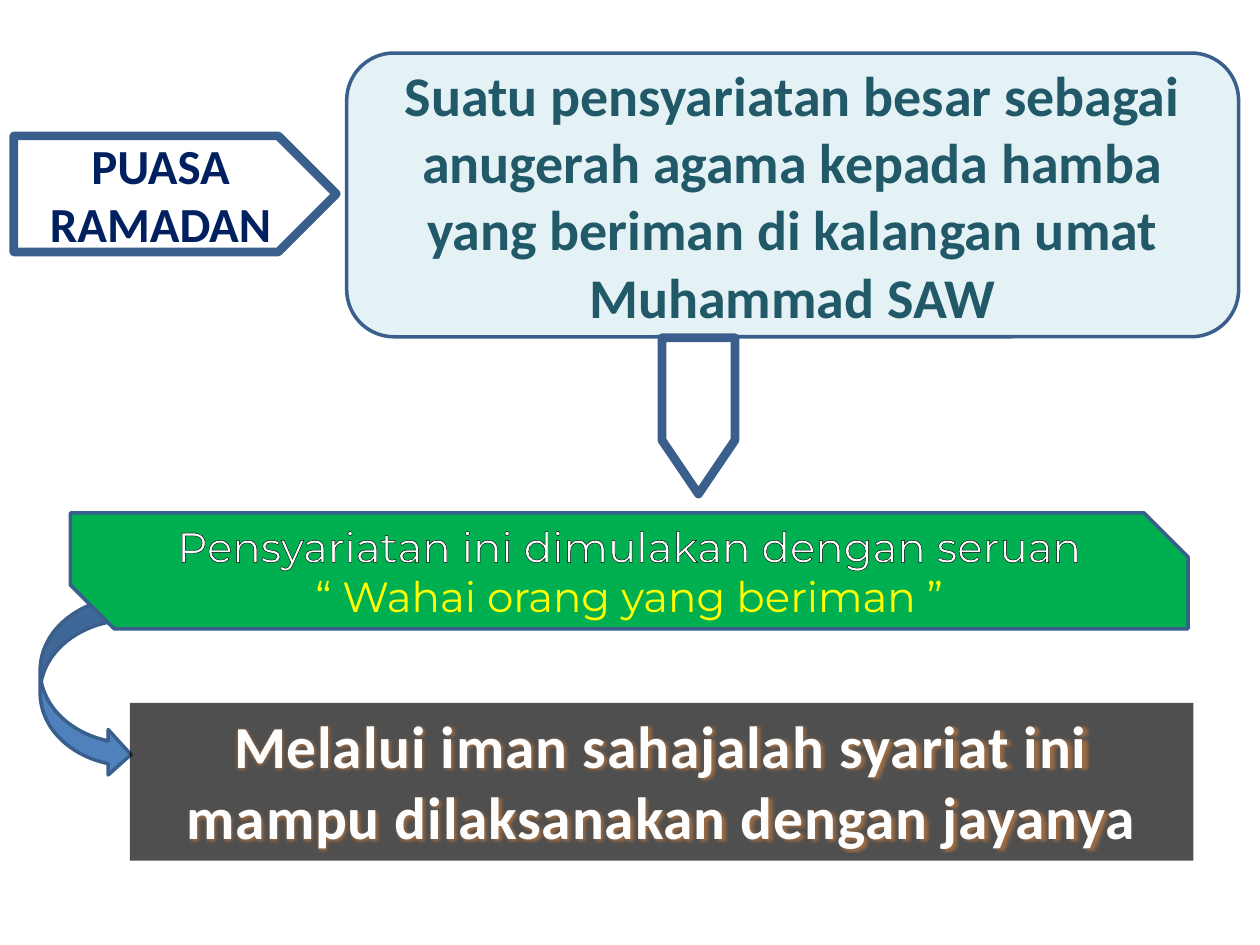
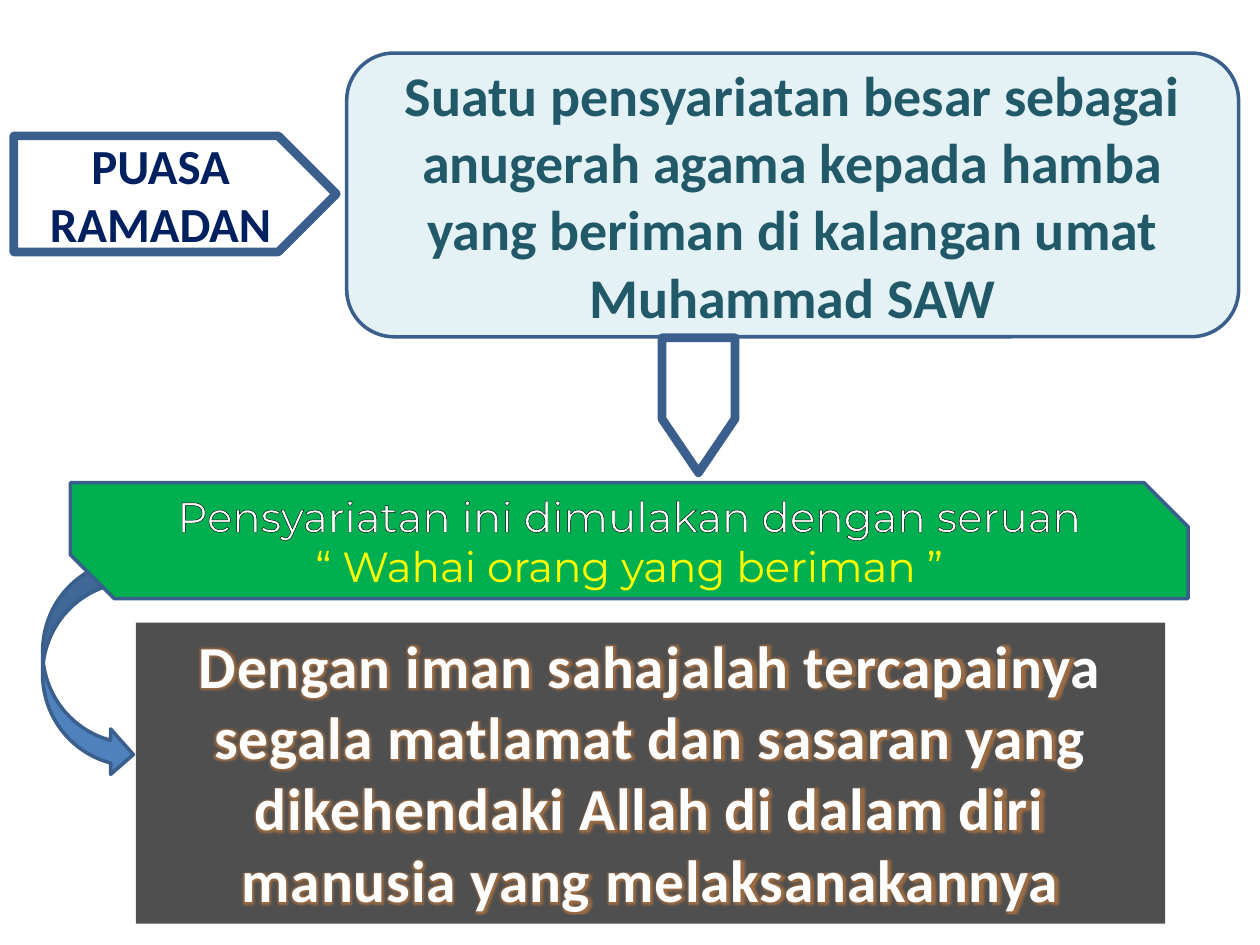
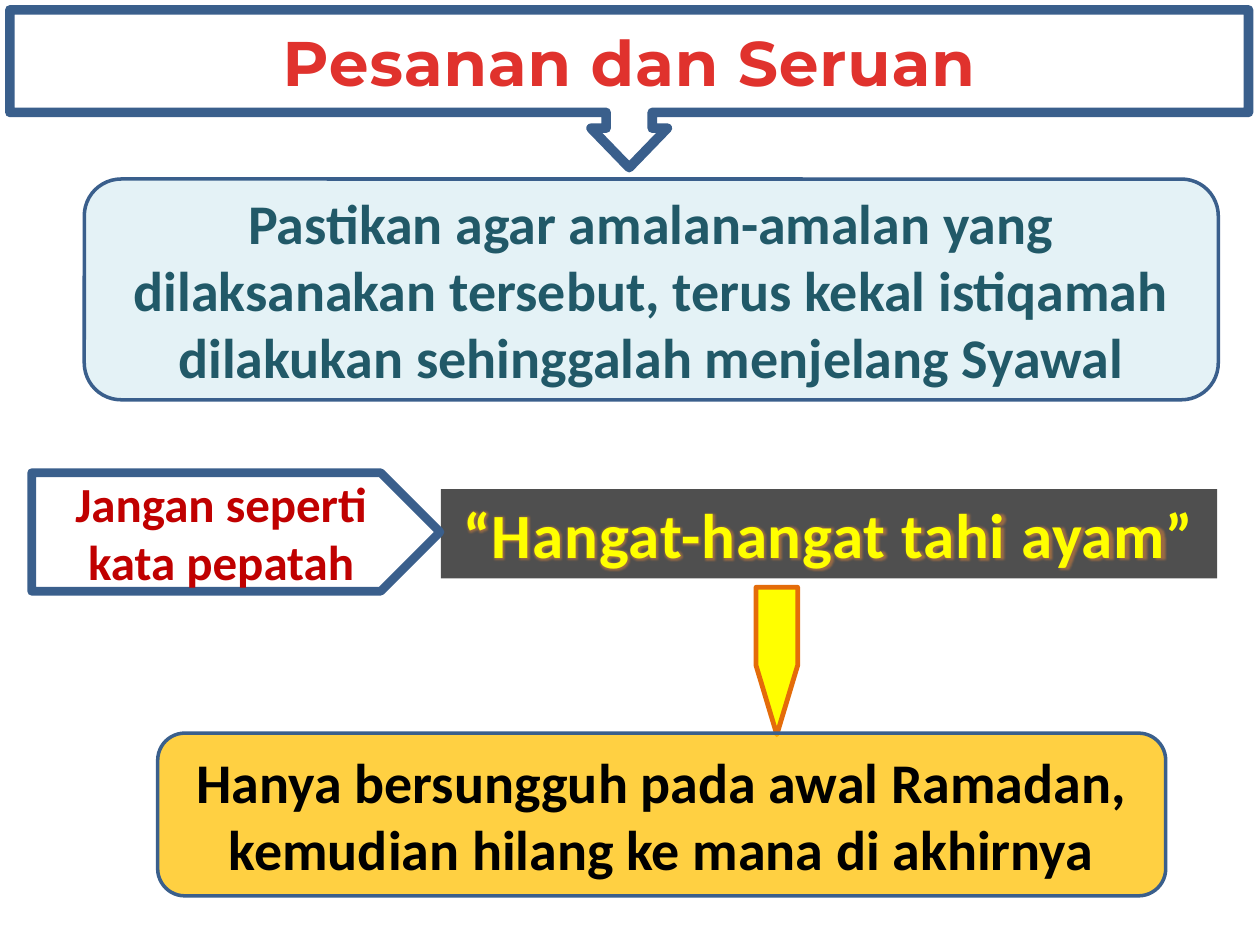
from dataclasses import dataclass
from typing import NamedTuple, Optional

import pptx
import pptx.dml.color
import pptx.enum.dml
import pptx.enum.shapes
import pptx.enum.text
import pptx.oxml
import pptx.oxml.ns
import pptx.util
from pptx.dml.color import RGBColor
from pptx.enum.shapes import MSO_SHAPE
from pptx.util import Cm

WHITE = RGBColor(0xFF, 0xFF, 0xFF)
OFF_WHITE = RGBColor(0xFF, 0xFE, 0xFE)
BLACK = RGBColor(0x00, 0x00, 0x00)
NAVY = RGBColor(0x00, 0x20, 0x60)
TEAL = RGBColor(0x21, 0x59, 0x68)
PALE_BLUE = RGBColor(0xDB, 0xEE, 0xF4)
BLUE = RGBColor(0x4F, 0x81, 0xBD)
EDGE_BLUE = RGBColor(0x3A, 0x5F, 0x8C)
GREEN = RGBColor(0x00, 0xB0, 0x50)
YELLOW = RGBColor(0xFF, 0xFF, 0x00)
GOLD = RGBColor(0xFF, 0xC0, 0x00)
ORANGE = RGBColor(0xE4, 0x6C, 0x0A)
GLOW_ORANGE = RGBColor(0xE7, 0x87, 0x38)
DARK_RED = RGBColor(0xC0, 0x00, 0x00)
TITLE_RED = RGBColor(0xE0, 0x32, 0x2D)
TITLE_SHADE = RGBColor(0xA2, 0x20, 0x1C)

CALLOUT_ADJ = (0.292, 0.242, 0.25, 0.65)


class Box(NamedTuple):
    """Left, top, width and height in centimetres."""
    left: float
    top: float
    width: float
    height: float

    def lengths(self) -> list:
        return [Cm(v) for v in self]


@dataclass(frozen=True)
class Look:
    fill: RGBColor
    line: Optional[RGBColor] = EDGE_BLUE
    weight: float = 2
    opacity: int = 100


@dataclass(frozen=True)
class TextStyle:
    size: float
    color: RGBColor
    name: str = "Calibri"
    bold: bool = True
    spacing: float = 0
    outline: Optional[RGBColor] = None
    outline_weight: float = 1
    effect: str = ""


CARD = Look(PALE_BLUE, opacity=74)
GOLD_CARD = Look(GOLD, opacity=74)
LABEL = Look(WHITE, weight=5)
CALLOUT = Look(WHITE, weight=5.5)
BANNER = Look(GREEN)
CURVED = Look(BLUE)
YELLOW_POINTER = Look(YELLOW, ORANGE, 2.75)
STATEMENT = Look(BLACK, None, opacity=69)

TEXT_SHADOW = ('<a:outerShdw blurRad="50800" dist="38100" dir="2700000">'
               '<a:srgbClr val="000000"/></a:outerShdw>')
TEXT_GLOW = ('<a:glow rad="45500"><a:srgbClr val="E78738">'
             '<a:alpha val="50000"/></a:srgbClr></a:glow>')

CARD_TEXT = TextStyle(32, TEAL)
GOLD_TEXT = TextStyle(32, BLACK)
LABEL_TEXT = TextStyle(28, NAVY)
WARNING_TEXT = TextStyle(28, DARK_RED)
BANNER_TEXT = TextStyle(24, WHITE, "Montserrat", False, 0, BLACK, 0.75, TEXT_SHADOW)
CALL_TEXT = TextStyle(24, YELLOW, "Montserrat", False, 0, BLACK, 0.75, TEXT_SHADOW)
STATEMENT_TEXT = TextStyle(34, OFF_WHITE, spacing=0.5, outline=GLOW_ORANGE, effect=TEXT_GLOW)
PROVERB_TEXT = TextStyle(36, YELLOW, spacing=0.5, outline=GLOW_ORANGE, effect=TEXT_GLOW)
TITLE_TEXT = TextStyle(36, TITLE_RED, "Montserrat", spacing=0.5)


def element(tag: str, attributes: str, content: str):
    return pptx.oxml.parse_xml(
        f'<a:{tag} {pptx.oxml.ns.nsdecls("a")} {attributes}>{content}</a:{tag}>')


def format_run(r, style: TextStyle) -> None:
    formats = {"size": pptx.util.Pt(style.size), "bold": style.bold, "name": style.name}
    for key, value in formats.items():
        setattr(r.font, key, value)
    r.font.color.rgb = style.color
    props = r.font._element
    if style.spacing:
        props.set("spc", str(int(style.spacing * 100)))
    if style.outline is not None:
        fill = f'<a:solidFill><a:srgbClr val="{style.outline}"/></a:solidFill>'
        weight = pptx.util.Pt(style.outline_weight)
        props.insert(0, element("ln", f'w="{weight}"', fill))
    if style.effect:
        solid = props.find(pptx.oxml.ns.qn("a:solidFill"))
        solid.addnext(element("effectLst", "", style.effect))


def write(tf, *lines: tuple[str, TextStyle]) -> None:
    """Fill a frame with centred paragraphs, one for each line."""
    tf.word_wrap = True
    for i, (text, style) in enumerate(lines):
        p = tf.add_paragraph() if i else tf.paragraphs[0]
        p.alignment = pptx.enum.text.PP_ALIGN.CENTER
        r = p.add_run()
        r.text = text
        format_run(r, style)


def paint(sp, look: Look) -> None:
    sp.fill.solid()
    sp.fill.fore_color.rgb = look.fill
    if look.opacity < 100:
        color = sp._element.spPr.find(".//" + pptx.oxml.ns.qn("a:srgbClr"))
        color.append(element("alpha", f'val="{look.opacity * 1000}"', ""))
    if look.line is None:
        sp.line.fill.background()
    else:
        sp.line.color.rgb = look.line
        sp.line.width = pptx.util.Pt(look.weight)


def add_figure(s, kind, box: Box, look: Look, *lines: tuple[str, TextStyle], adj=()):
    sp = s.shapes.add_shape(kind, *box.lengths())
    sp.shadow.inherit = False
    for i, value in enumerate(adj):
        sp.adjustments[i] = value
    paint(sp, look)
    if lines:
        sp.text_frame.vertical_anchor = pptx.enum.text.MSO_ANCHOR.MIDDLE
        write(sp.text_frame, *lines)
    return sp


def add_statement(s, box: Box, text: str, style: TextStyle) -> None:
    sp = s.shapes.add_textbox(*box.lengths())
    paint(sp, STATEMENT)
    write(sp.text_frame, (text, style))
    sp.text_frame.auto_size = pptx.enum.text.MSO_AUTO_SIZE.SHAPE_TO_FIT_TEXT


def add_down_pointer(s, center: float, top: float, length: float, breadth: float,
                     look: Look, adj: float) -> None:
    """Pentagon turned to point down, placed by its visible top and centre line."""
    box = Box(center - length / 2, top + (length - breadth) / 2, length, breadth)
    sp = add_figure(s, MSO_SHAPE.PENTAGON, box, look, adj=(adj,))
    sp.rotation = 90


def add_title(s, box: Box, text: str) -> None:
    title = s.shapes.title
    for key, value in zip(("left", "top", "width", "height"), box.lengths()):
        setattr(title, key, value)
    tf = title.text_frame
    tf.vertical_anchor = pptx.enum.text.MSO_ANCHOR.MIDDLE
    write(tf, (text, TITLE_TEXT))
    fill = tf.paragraphs[0].runs[0].font.fill
    fill.gradient()
    fill.gradient_angle = 270
    stops = ((0.25, TITLE_RED), (1, TITLE_SHADE))
    for stop, (position, color) in zip(fill.gradient_stops, stops):
        stop.position = position
        stop.color.rgb = color


@dataclass(frozen=True)
class FastingSlide:
    statement: str
    statement_box: Box
    curved_box: Box
    banner_top: float
    pointer_length: float


FASTING_SLIDES = (
    FastingSlide("Melalui iman sahajalah syariat ini mampu dilaksanakan dengan jayanya",
                 Box(2.62, 14.17, 21.44, 3.18), Box(0.81, 12.04, 1.83, 3.63), 10.34, 3.15),
    FastingSlide("Dengan iman sahajalah tercapainya segala matlamat dan sasaran yang "
                 "dikehendaki Allah di dalam diri manusia yang melaksanakannya",
                 Box(2.74, 12.55, 20.75, 6.07), Box(0.86, 11.28, 1.83, 4.39), 9.73, 2.72),
)


def build_fasting_slide(prs, content: FastingSlide) -> None:
    s = prs.slides.add_slide(prs.slide_layouts[6])
    add_figure(s, MSO_SHAPE.ROUNDED_RECTANGLE, Box(6.99, 1.07, 17.98, 5.72), CARD,
               ("Suatu pensyariatan besar sebagai anugerah agama kepada hamba "
                "yang beriman di kalangan umat Muhammad SAW", CARD_TEXT))
    add_figure(s, MSO_SHAPE.CURVED_RIGHT_ARROW, content.curved_box, CURVED)
    add_figure(s, MSO_SHAPE.PENTAGON, Box(0.28, 2.74, 6.5, 2.34), LABEL,
               ("PUASA", LABEL_TEXT), ("RAMADAN", LABEL_TEXT))
    add_figure(s, MSO_SHAPE.SNIP_2_DIAG_RECTANGLE,
               Box(1.42, content.banner_top, 22.53, 2.34), BANNER,
               ("Pensyariatan ini dimulakan dengan seruan", BANNER_TEXT),
               ("“ Wahai orang yang beriman ”", CALL_TEXT), adj=(0, 0.379))
    add_statement(s, content.statement_box, content.statement, STATEMENT_TEXT)
    add_down_pointer(s, 14.08, 6.81, content.pointer_length, 1.47, LABEL, 0.737)


def build_message_slide(prs) -> None:
    s = prs.slides.add_slide(prs.slide_layouts[5])
    add_figure(s, MSO_SHAPE.ROUNDED_RECTANGLE, Box(1.7, 3.61, 22.86, 4.45), CARD,
               ("Pastikan agar amalan-amalan yang dilaksanakan tersebut, terus kekal "
                "istiqamah dilakukan sehinggalah menjelang Syawal", CARD_TEXT))
    callout_box = Box(0.2, 0.2, 24.97, 3.18)
    callout = add_figure(s, MSO_SHAPE.DOWN_ARROW_CALLOUT, callout_box, CALLOUT,
                         adj=CALLOUT_ADJ)
    add_title(s, callout_box._replace(height=callout_box.height * CALLOUT_ADJ[3]),
              "Pesanan dan Seruan")
    callout._element.addnext(s.shapes.title._element)
    add_statement(s, Box(8.89, 9.86, 15.65, 1.8), "“Hangat-hangat tahi ayam”", PROVERB_TEXT)
    add_figure(s, MSO_SHAPE.PENTAGON, Box(0.64, 9.53, 8.23, 2.39), LABEL,
               ("Jangan seperti kata pepatah", WARNING_TEXT))
    add_down_pointer(s, 15.66, 11.84, 2.97, 0.84, YELLOW_POINTER, 1.662)
    add_figure(s, MSO_SHAPE.ROUNDED_RECTANGLE, Box(3.18, 14.78, 20.32, 3.28), GOLD_CARD,
               ("Hanya bersungguh pada awal Ramadan, kemudian hilang ke mana di akhirnya",
                GOLD_TEXT))


def main() -> None:
    prs = pptx.Presentation()
    prs.slide_width, prs.slide_height = Cm(25.4), Cm(19.05)
    for content in FASTING_SLIDES:
        build_fasting_slide(prs, content)
    build_message_slide(prs)
    prs.save("out.pptx")


if __name__ == "__main__":
    main()
